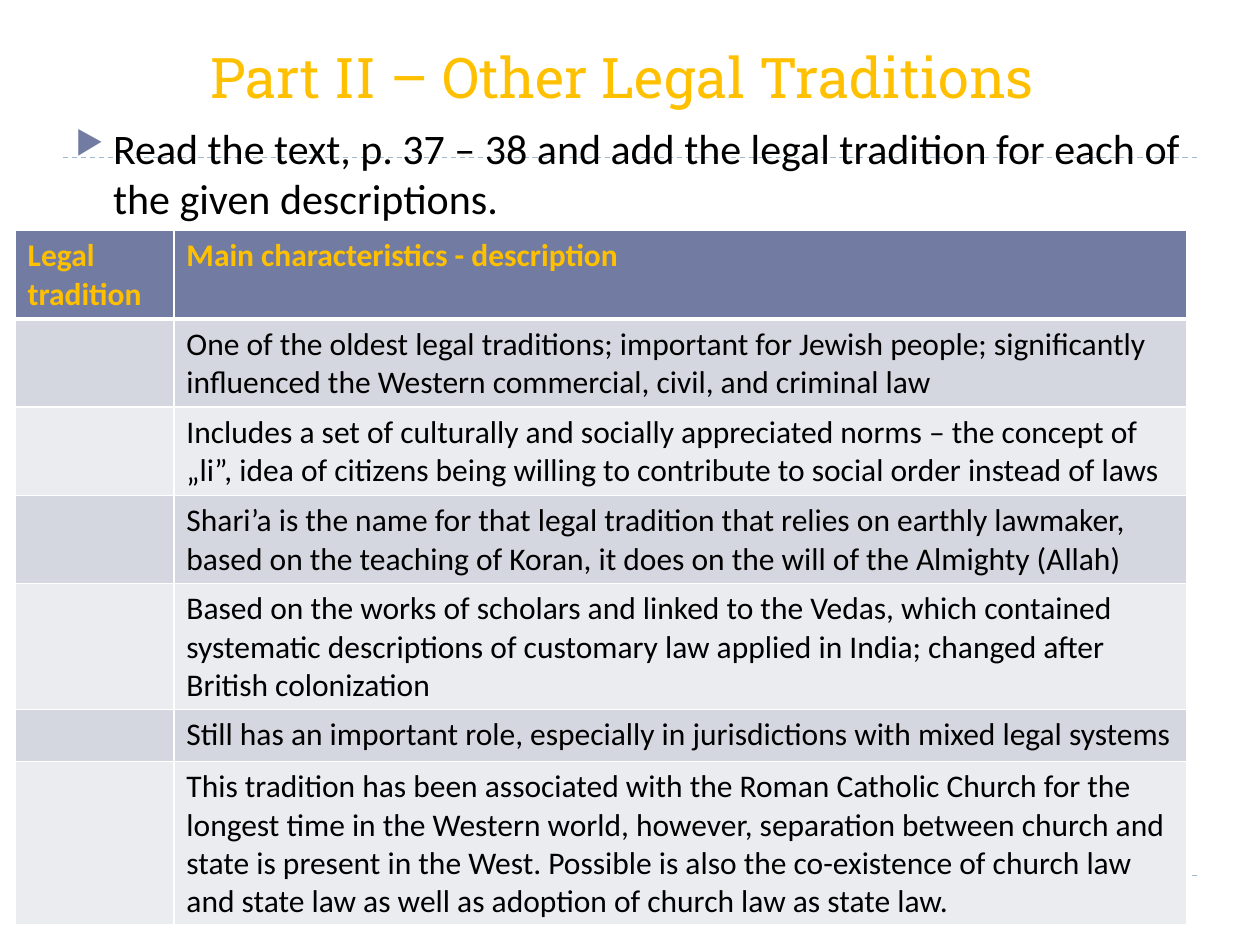
import lxml.etree
import pptx
import pptx.dml.color
import pptx.enum.dml
import pptx.enum.shapes
import pptx.enum.text
import pptx.oxml.ns
import pptx.util
from dataclasses import dataclass
from typing import Any

Inches = pptx.util.Inches
Pt = pptx.util.Pt
qn = pptx.oxml.ns.qn

GOLD = "FFC000"
BLACK = "000000"
SLATE = "727CA3"
BANDS = ("D5D7E0", "EBECF0")


@dataclass
class TextStyle:
    font: str
    size: float
    color: str
    bold: bool = False


HEADING = TextStyle("Roboto Slab", 32, GOLD)
TASK = TextStyle("Calibri", 24, BLACK)
TABLE_HEAD = TextStyle("Calibri", 18, GOLD, True)
TABLE_BODY = TextStyle("Calibri", 18, BLACK)

ROWS = (
    ("Legal tradition", "Main characteristics - description"),
    ("", "One of the oldest legal traditions; important for Jewish people; "
         "significantly influenced the Western commercial, civil, and criminal law"),
    ("", "Includes a set of culturally and socially appreciated norms – the concept of "
         "„li”, idea of citizens being willing to contribute to social order instead of laws"),
    ("", "Shari’a is the name for that legal tradition that relies on earthly lawmaker, "
         "based on the teaching of Koran, it does on the will of the Almighty (Allah)"),
    ("", "Based on the works of scholars and linked to the Vedas, which contained systematic "
         "descriptions of customary law applied in India; changed after British colonization"),
    ("", "Still has an important role, especially in jurisdictions with mixed legal systems"),
    ("", "This tradition has been associated with the Roman Catholic Church for the longest "
         "time in the Western world, however, separation between church and state is present "
         "in the West. Possible is also the co-existence of church law and state law as well "
         "as adoption of church law as state law."),
)
COLUMN_WIDTHS = (1.26, 8.04)
ROW_HEIGHT = 0.41


def rgb(value: str) -> pptx.dml.color.RGBColor:
    return pptx.dml.color.RGBColor.from_string(value)


def write(frame: Any, text: str, style: TextStyle) -> Any:
    frame.text = text
    paragraph = frame.paragraphs[0]
    for target in (paragraph, *paragraph.runs):
        target.font.name = style.font
        target.font.size = Pt(style.size)
        target.font.bold = style.bold
        target.font.color.rgb = rgb(style.color)
    return paragraph


def add_text(slide: Any, top: float, height: float, text: str, style: TextStyle) -> Any:
    box = slide.shapes.add_textbox(Inches(0.5), Inches(top), Inches(9), Inches(height))
    box.text_frame.word_wrap = True
    write(box.text_frame, text, style)
    return box.text_frame


def add_rule(slide: Any, y: float) -> None:
    rule = slide.shapes.add_connector(
        pptx.enum.shapes.MSO_CONNECTOR.STRAIGHT, Inches(0.5), Inches(y), Inches(9.5), Inches(y))
    rule.line.color.rgb = rgb("9FB8CD")
    rule.line.width = Pt(0.75)
    rule.line.dash_style = pptx.enum.dml.MSO_LINE.DASH
    lxml.etree.SubElement(rule._element.spPr, qn("a:effectLst"))


def add_bullet(paragraph: Any) -> None:
    properties = paragraph._p.get_or_add_pPr()
    properties.set("marL", str(Inches(0.3)))
    properties.set("indent", str(Inches(-0.3)))
    color = lxml.etree.SubElement(properties, qn("a:buClr"))
    lxml.etree.SubElement(color, qn("a:srgbClr"), val=SLATE)
    lxml.etree.SubElement(properties, qn("a:buSzPct"), val="76000")
    lxml.etree.SubElement(properties, qn("a:buChar"), char="▶")
    # The default run style has to come last
    default_style = properties.find(qn("a:defRPr"))
    if default_style is not None:
        properties.append(default_style)


def set_borders(cell: Any, top: float, bottom: float) -> None:
    properties = cell._tc.get_or_add_tcPr()
    for side, width in (("L", 1), ("R", 1), ("T", top), ("B", bottom)):
        border = lxml.etree.SubElement(properties, qn(f"a:ln{side}"), w=str(Pt(width)))
        fill = lxml.etree.SubElement(border, qn("a:solidFill"))
        lxml.etree.SubElement(fill, qn("a:srgbClr"), val="FFFFFF")


def add_traditions(slide: Any) -> None:
    frame = slide.shapes.add_table(
        len(ROWS), len(COLUMN_WIDTHS), Inches(0.12), Inches(1.83),
        Inches(sum(COLUMN_WIDTHS)), Inches(ROW_HEIGHT * len(ROWS)))
    for column, width in zip(frame.table.columns, COLUMN_WIDTHS):
        column.width = Inches(width)
    for index, texts in enumerate(ROWS):
        frame.table.rows[index].height = Inches(ROW_HEIGHT)
        is_head = index == 0
        for cell, text in zip(frame.table.rows[index].cells, texts):
            write(cell.text_frame, text, TABLE_HEAD if is_head else TABLE_BODY)
            set_borders(cell, top=3 if index == 1 else 1, bottom=3 if is_head else 1)
            cell.fill.solid()
            cell.fill.fore_color.rgb = rgb(SLATE if is_head else BANDS[(index - 1) % 2])
    frame.height = Inches(5.51)


def main() -> None:
    deck = pptx.Presentation()
    deck.slide_width, deck.slide_height = Inches(10), Inches(7.5)
    slide = deck.slides.add_slide(deck.slide_layouts[6])

    # Dashed rules
    for y in (6.95, 1.25):
        add_rule(slide, y)

    # Title
    title = add_text(slide, 0.17, 0.75, "Part II – Other Legal Traditions ", HEADING)
    title.vertical_anchor = pptx.enum.text.MSO_ANCHOR.BOTTOM
    title.paragraphs[0].alignment = pptx.enum.text.PP_ALIGN.CENTER

    # Task
    task = add_text(slide, 0.92, 5.4, "Read the text, p. 37 – 38 and add the legal tradition "
                    "for each of the given descriptions.", TASK)
    task.paragraphs[0].space_before = Pt(6)
    add_bullet(task.paragraphs[0])

    # Table of traditions
    add_traditions(slide)
    deck.save("out.pptx")


if __name__ == "__main__":
    main()
